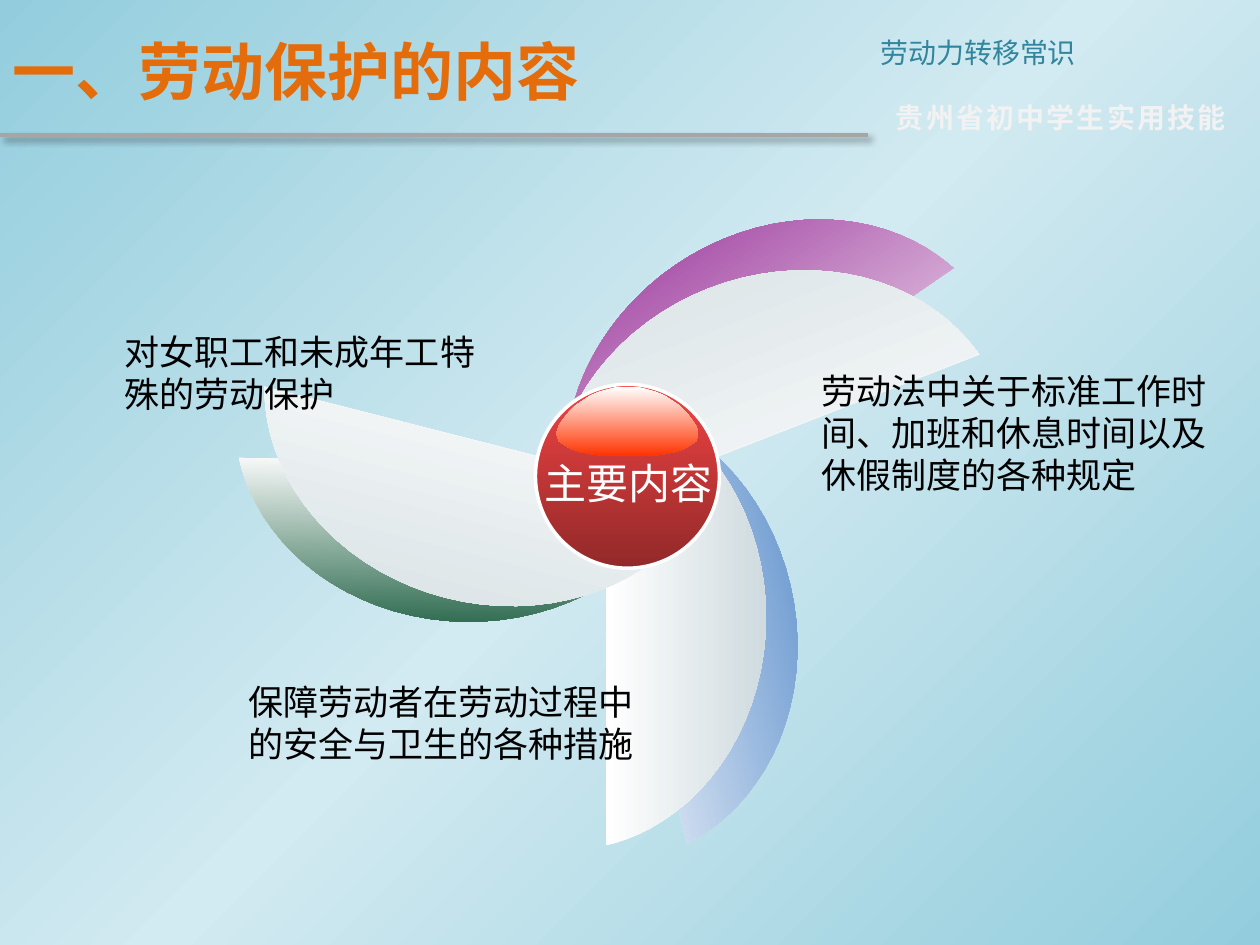
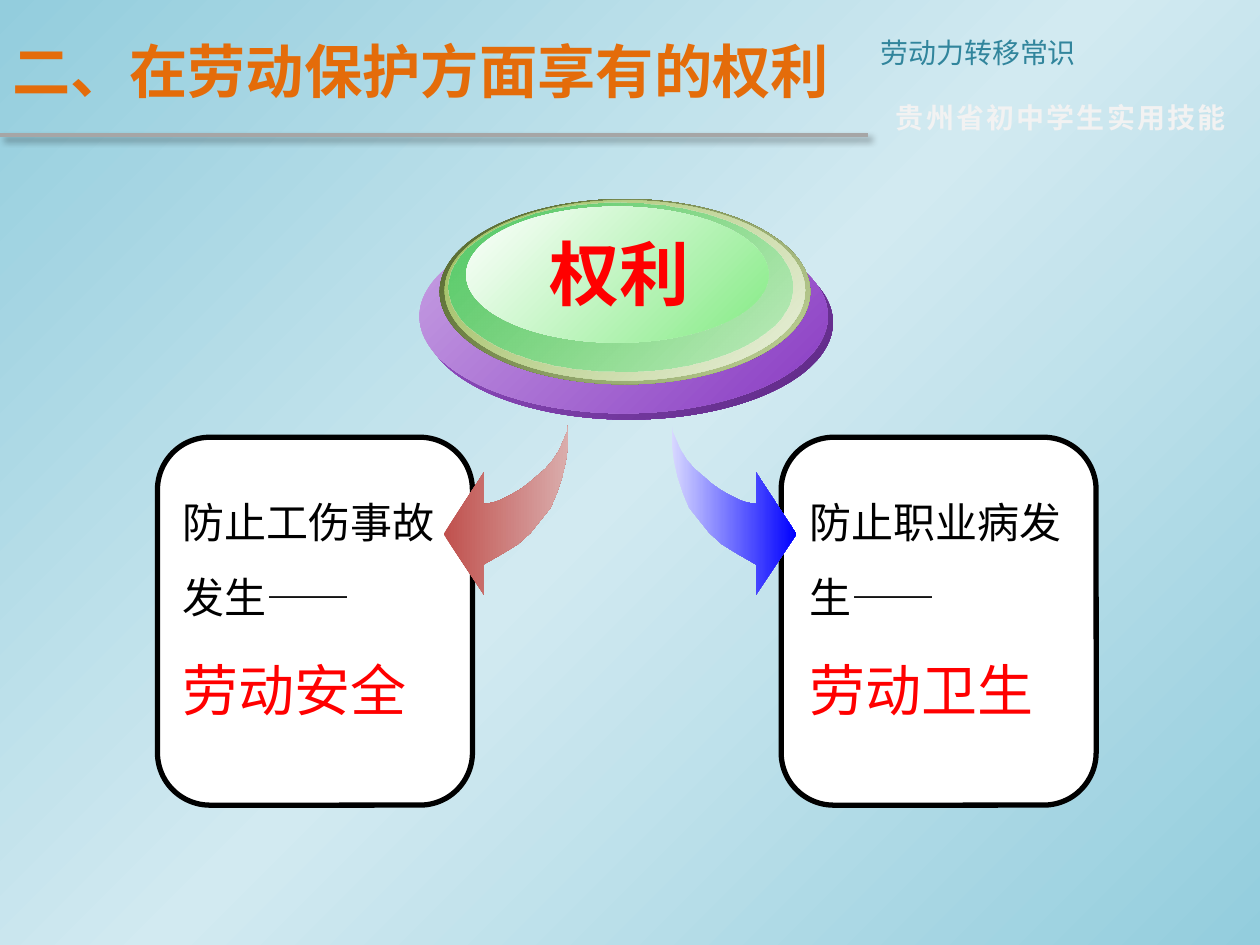
import copy
import math
from lxml import etree
from pptx import Presentation, util as u
from pptx.dml.color import RGBColor as RGB
from pptx.enum import shapes as sh, text as tx
from pptx.oxml.ns import qn

# Grid: 100 columns by 75 rows
WIDE, HIGH = u.Inches(10), u.Inches(7.5)
COL, ROW = WIDE / 100, HIGH / 75
FONT = "Noto Sans CJK SC"

WHITE, BLACK = RGB(255, 255, 255), RGB(0, 0, 0)
SKY, MIST = RGB(0x93, 0xCD, 0xDD), RGB(0xD2, 0xEA, 0xF1)
ORANGE, TEAL = RGB(0xE4, 0x6C, 0x0A), RGB(0x31, 0x85, 0x9C)
RULE, PALE = RGB(0xA6, 0xA6, 0xA6), RGB(0xF2, 0xF2, 0xF2)
RED, FIRE = RGB(255, 0, 0), RGB(0xFF, 0x33, 0)
ROSE, WINE = RGB(0xF1, 0x43, 0x43), RGB(0x92, 0x29, 0x29)
STEEL, AZURE = RGB(0xCF, 0xDB, 0xDF), RGB(0x44, 0x7E, 0xC4)
PINE, PLUM = RGB(0x2A, 0x68, 0x4C), RGB(0x80, 0, 0x80)
BRICK, BLUSH = RGB(0xC0, 0x50, 0x4D), RGB(0xDA, 0xAD, 0xAC)
BLUE, ICE = RGB(0, 0, 255), RGB(0xD8, 0xD8, 0xFF)

# Half outline of the gloss: distance from its axis, distance from its top
GLOSS = [(0, 0), (.85, 0), (1.55, .2), (2.25, .4), (2.95, .7), (3.55, 1.1),
         (4.15, 1.5), (4.65, 2), (5.05, 2.5), (5.45, 3.1), (5.65, 3.7),
         (5.55, 4), (5.45, 4.3), (5.15, 4.5), (4.55, 4.9), (3.65, 5.2),
         (2.55, 5.4), (1.15, 5.5)]
# Arrow outline: distance from its tail, outwards and down
ARROW = [(0, 0), (0, 1.6), (.2, 3), (.5, 4.3), (.9, 5.5), (1.4, 6.7),
         (2.2, 7.7), (3, 8.7), (4, 9.6), (5.3, 10.4), (6.7, 11.2),
         (6.7, 13.6), (9.9, 8.8), (6.7, 3.9), (6.7, 6.4), (6, 6.3),
         (5.4, 6.1), (4.6, 5.7), (3.9, 5.3), (3.2, 4.8), (2.5, 4.2),
         (1.8, 3.6), (1.2, 2.9), (.7, 2.1), (.4, 1.4), (.1, .7)]
# Discs of the plate: left, top, width, height, two colours, end opacity
DISCS = [(.4, 2.1, 32.4, 15.4, "9954CC", "5D2884", 100),
         (0, 1.6, 32.4, 15.4, "C7A1E3", "893BC3", 100),
         (1.6, 0, 29.4, 14.7, "4F6228", "C3D69B", 100),
         (2, .1, 28.6, 14.3, "9BBB59", "EBF1DE", 100),
         (2.3, .3, 27.3, 13.4, "53C969", "91EBA2", 48),
         (3.7, .6, 24, 10.8, "FFFFFF", "85EB85", 100)]


def cell(x, y, w, h):
    return [round(n) for n in (x * COL, y * ROW, w * COL, h * ROW)]


def grad(fill, root, tints, turn):
    """Even linear gradient, turned clockwise."""
    fill.gradient()
    fill.gradient_angle = (360 - turn) % 360
    last = list(root.iter(qn("a:gs")))[-1]
    for _ in tints[2:]:
        last.addnext(copy.deepcopy(last))
    for i, (stop, tint) in enumerate(zip(fill.gradient_stops, tints)):
        stop.color.rgb = tint
        stop.position = i / (len(tints) - 1)


def paint(part, tints, turn=0):
    part.shadow.inherit = False
    grad(part.fill, part._element, tints, turn)
    part.line.fill.background()
    return part


def style(para, size, tint, bold=False, gap=None):
    for run in para.runs:
        font = run.font
        font.size, font.bold, font.color.rgb = u.Pt(size), bold, tint
        font.name = FONT
        latin = run._r.rPr.find(qn("a:latin"))
        east = etree.Element(qn("a:ea"), typeface=FONT)
        latin.addnext(east)
        if gap:
            run._r.rPr.set("spc", str(gap))


def label(slide, box, words, size, tint, bold=False, align=None, wrap=True, gap=None):
    frame = slide.shapes.add_textbox(*cell(*box)).text_frame
    frame.word_wrap = wrap
    frame.text = words
    para = frame.paragraphs[0]
    para.alignment = align
    style(para, size, tint, bold, gap)


def outline(slide, x, y, dots):
    """Closed outline of grid points measured from x, y."""
    dots = [(round((x + dx) * COL), round((y + dy) * ROW)) for dx, dy in dots]
    pen = slide.shapes.build_freeform(*dots[0])
    pen.add_line_segments(dots[1:], close=True)
    return pen.convert_to_shape()


def oval(slide, box):
    return slide.shapes.add_shape(sh.MSO_SHAPE.OVAL, *cell(*box))


# Header shared by both slides
def header(slide, words, size):
    title = slide.shapes.title
    title.left, title.top, title.width, title.height = cell(0, .5, 68.9, 10.2)
    frame = title.text_frame
    frame.text = words
    frame.auto_size = tx.MSO_AUTO_SIZE.NONE
    frame.vertical_anchor = tx.MSO_ANCHOR.MIDDLE
    frame.paragraphs[0].alignment = tx.PP_ALIGN.LEFT
    style(frame.paragraphs[0], size, ORANGE, True)

    x, y, w, _ = cell(0, 10.7, 68.9, 0)
    rule = slide.shapes.add_connector(sh.MSO_CONNECTOR.STRAIGHT, x, y, x + w, y)
    rule.line.color.rgb, rule.line.width = RULE, u.Pt(2.25)
    glow = etree.SubElement(rule._element.spPr, qn("a:effectLst"))
    cast = etree.SubElement(glow, qn("a:outerShdw"), blurRad=str(u.Pt(4)),
                            dist=str(u.Pt(3)), dir="2700000", algn="tl")
    ink = etree.SubElement(cast, qn("a:srgbClr"), val=str(BLACK))
    etree.SubElement(ink, qn("a:alpha"), val="40000")

    label(slide, (68.9, 2.3, 31.1, 3.7), "劳动力转移常识", 16, TEAL)
    label(slide, (69.1, 7.5, 30.2, 3.7), "贵州省初中学生实用技能", 16, PALE,
          True, tx.PP_ALIGN.CENTER, False, 130)


# One blade: a slice of an ellipse, turned about its own centre
def blade(slide, x, y, turn, tint):
    dots = []
    for i in range(41):
        rise = 18.1 * math.cos(math.pi * i / 40)
        dots.append((16 * math.sqrt(1 - (rise / 18.5) ** 2) - 3.3, 18.1 - rise))
    part = paint(outline(slide, x, y, dots), (WHITE, tint))
    part.rotation = turn


# Wheel of three double blades, placed about its hub
def wheel(slide, x, y):
    for dx, dy, turn, tint in (
            (.4, -8, 346.8, AZURE), (-1.7, -6.9, 0, STEEL),
            (-19.2, -12.9, 91, PINE), (-19.2, -14.6, 104.3, STEEL),
            (1, -29.6, 235.5, PLUM), (2.4, -27.1, 248.7, STEEL)):
        blade(slide, x + dx, y + dy, turn, tint)
    hub = paint(oval(slide, (x - 7.3, y - 7.3, 14.6, 14.6)), (ROSE, WINE), 90)
    hub.line.color.rgb, hub.line.width = WHITE, u.Pt(2)
    dots = GLOSS + [(-dx, dy) for dx, dy in GLOSS[:0:-1]]
    paint(outline(slide, x, y - 7.1, dots), (WHITE, FIRE), 90)
    label(slide, (x - 7.7, y - 2, 15.5, 5.1), "主要内容", 24, WHITE,
          align=tx.PP_ALIGN.CENTER, wrap=False)
    for dx, dy, w, h, words in (
            (-40.9, -12.1, 30.5, 7.7, "对女职工和未成年工特殊的劳动保护"),
            (14.4, -9, 32.9, 11.1, "劳动法中关于标准工作时间、加班和休息时间以及休假制度的各种规定"),
            (-31.1, 15.7, 32.9, 7.7, "保障劳动者在劳动过程中的安全与卫生的各种措施")):
        label(slide, (x + dx, y + dy, w, h), words, 20, BLACK)


# Plate of stacked discs with a caption
def plate(slide, x, y):
    for dx, dy, w, h, start, end, clear in DISCS:
        tints = RGB.from_string(start), RGB.from_string(end)
        disc = paint(oval(slide, (x + dx, y + dy, w, h)), tints, 45)
        if clear < 100:
            ink = list(disc._element.iter(qn("a:srgbClr")))[-1]
            etree.SubElement(ink, qn("a:alpha"), val=str(clear * 1000))
    label(slide, (x + 9.3, y + 2, 13.2, 7.7), "权利", 40, RED, True,
          tx.PP_ALIGN.CENTER, False)


# Rounded card with a lead and a red result
def card(slide, x, y, inset, lead, result):
    for kind, box in ((sh.MSO_SHAPE.ROUNDED_RECTANGLE, (x, y, 25, 29.2)),
                      (sh.MSO_SHAPE.RECTANGLE, (x + inset, y + 2.2, 22.3, 21.2))):
        part = slide.shapes.add_shape(kind, *cell(*box))
        part.shadow.inherit = False
        part.fill.solid()
        part.fill.fore_color.rgb = WHITE
        if kind == sh.MSO_SHAPE.ROUNDED_RECTANGLE:
            part.line.color.rgb, part.line.width = BLACK, u.Pt(3)
        else:
            part.line.fill.background()
    frame = part.text_frame
    frame.word_wrap = True
    frame.vertical_anchor = tx.MSO_ANCHOR.TOP
    frame.text = lead + "\n" + result
    for para, size, tint in zip(frame.paragraphs, (24, 32), (BLACK, RED)):
        para.alignment, para.line_spacing = tx.PP_ALIGN.LEFT, 1.5
        style(para, size, tint)


# Curved arrow; side is -1 to the left and 1 to the right
def arrow(slide, x, y, side, tints):
    paint(outline(slide, x, y, [(side * dx, dy) for dx, dy in ARROW]), tints)


def main():
    prs = Presentation()
    prs.slide_width, prs.slide_height = WIDE, HIGH
    master = prs.slide_master
    grad(master.background.fill, master._element, (SKY, MIST, SKY), 45)
    plain = prs.slide_layouts[5]

    slide = prs.slides.add_slide(plain)
    header(slide, "一、劳动保护的内容", 36)
    wheel(slide, 49.8, 37.8)

    slide = prs.slides.add_slide(plain)
    header(slide, "二、在劳动保护方面享有的权利", 33.3)
    card(slide, 12.5, 34.7, 1, "防止工伤事故发生——", "劳动安全")
    card(slide, 62, 34.7, 1.3, "防止职业病发生——", "劳动卫生")
    arrow(slide, 45.1, 33.6, -1, (BRICK, BLUSH))
    arrow(slide, 53.3, 33.6, 1, (ICE, BLUE))
    plate(slide, 33.3, 15.8)
    prs.save("out.pptx")


if __name__ == "__main__":
    main()
